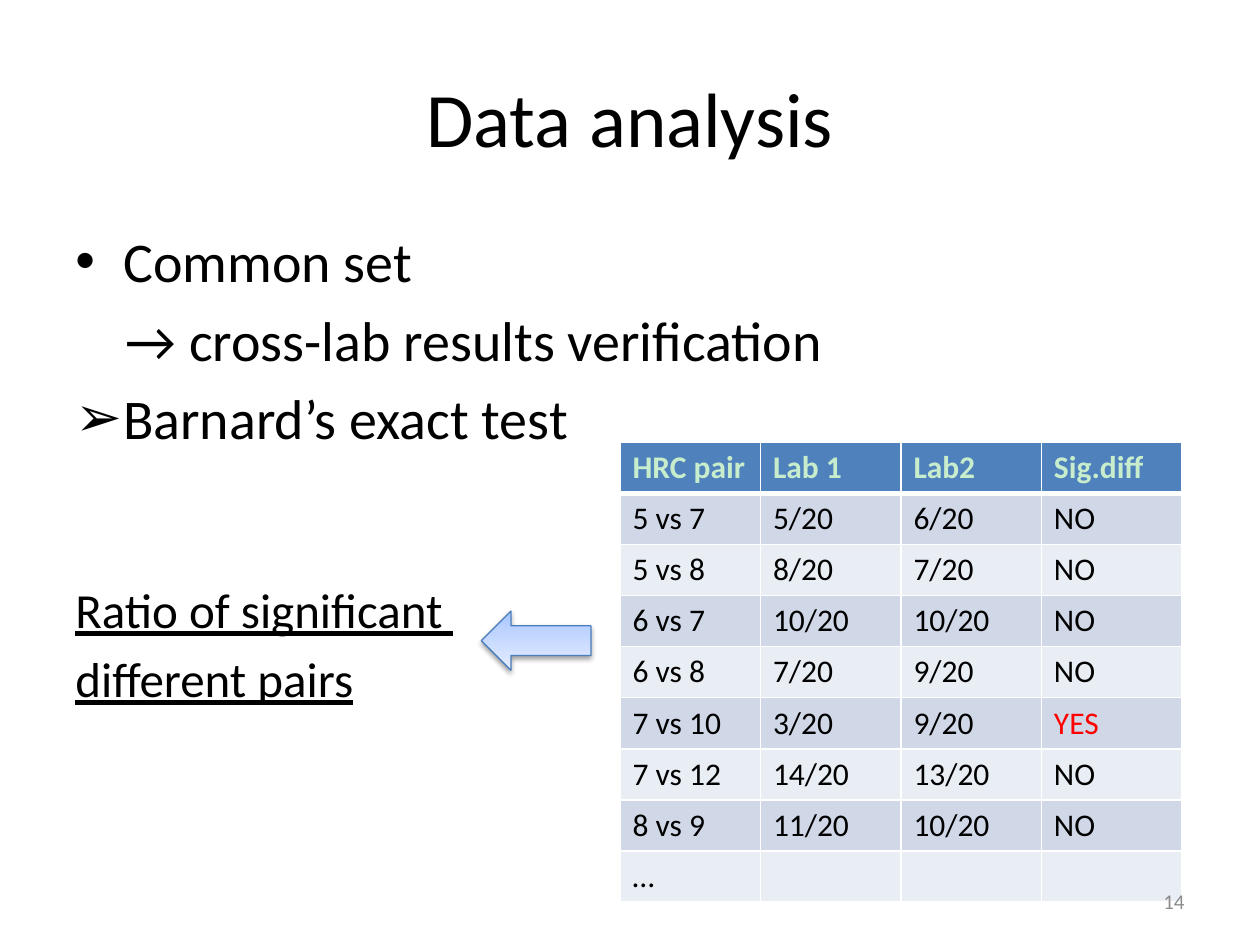
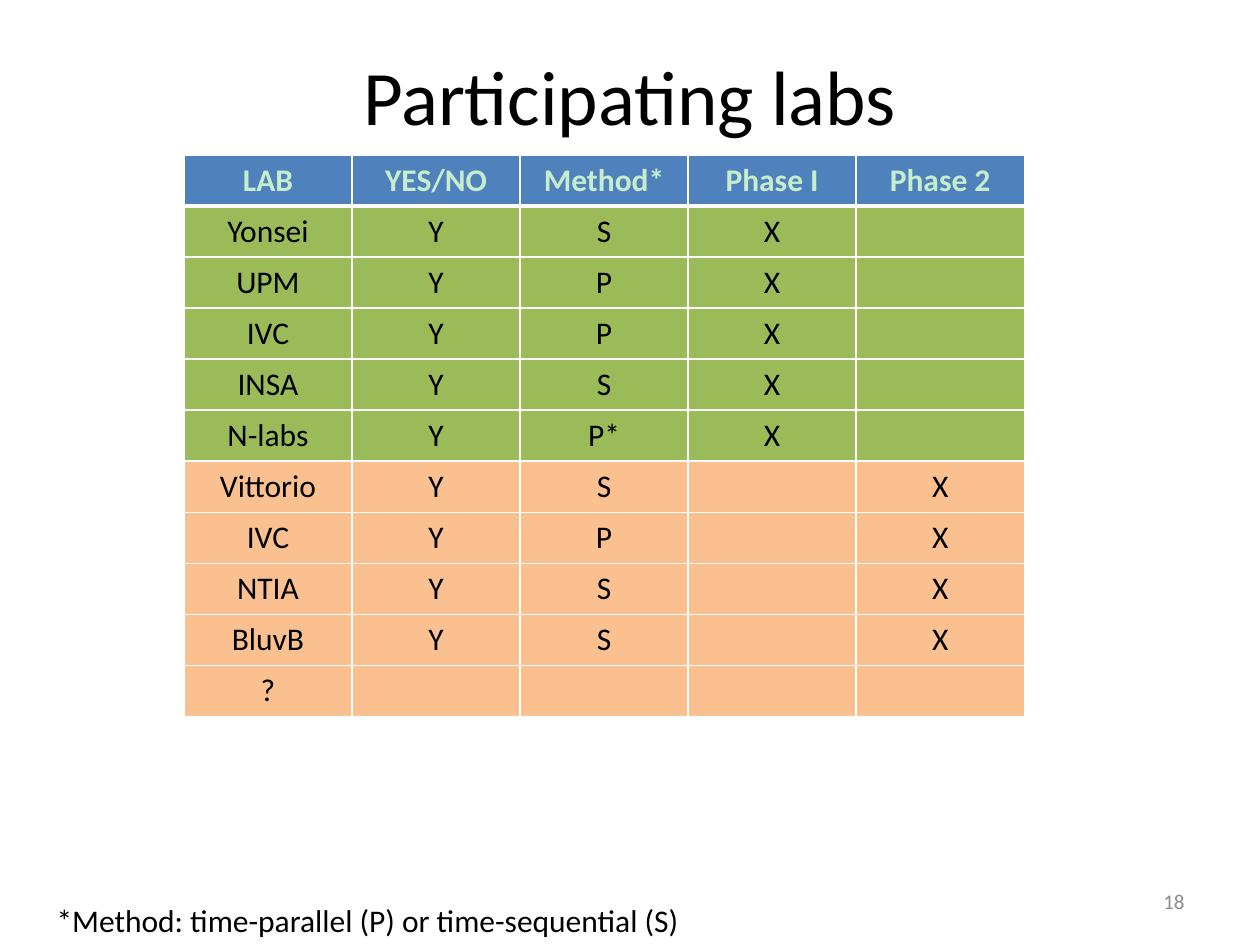
from lxml import etree
from pptx import Presentation
from pptx import util as u
from pptx.dml.color import RGBColor
from pptx.enum import shapes, text
from pptx.oxml import ns, parse_xml

FONT = "Calibri"
COLORS = {
    "paper": "FFFFFF", "ink": "000000", "header": "4F81BD", "header_ink": "C7EDCC",
    "band_dark": "D0D8E8", "band_light": "E9EDF4", "alert": "FF0000",
    "phase_1": "9BBB59", "phase_2": "FAC090", "number": "8C8C8C",
    "arrow_line": "4B7EBC",
}
ARROW_STOPS = [(0, "A4C4FF"), (35, "BFD4FF"), (100, "E6EEFF")]

ANALYSIS_POINTS = [
    {"words": "Common set", "size": 32, "before": 6.4, "left": 0.38, "bullet": "•"},
    {"words": "→ cross-lab results verification", "size": 32, "before": 6.4, "left": 0.4},
    {"words": "Barnard’s exact test", "size": 32, "before": 6.4, "left": 0.38, "bullet": "➢"},
    {"words": "Ratio of significant ", "size": 28, "before": 73.8, "underline": True},
    {"words": "different pairs", "size": 28, "before": 5.6, "underline": True},
]
PAIR_RESULTS = [
    ("HRC pair", "Lab 1", "Lab2", "Sig.diff"),
    ("5 vs 7", "5/20", "6/20", "NO"),
    ("5 vs 8", "8/20", "7/20", "NO"),
    ("6 vs 7", "10/20", "10/20", "NO"),
    ("6 vs 8", "7/20", "9/20", "NO"),
    ("7 vs 10", "3/20", "9/20", "YES"),
    ("7 vs 12", "14/20", "13/20", "NO"),
    ("8 vs 9", "11/20", "10/20", "NO"),
    ("…", "", "", ""),
]
LABS = [
    ("LAB", "YES/NO", "Method*", "Phase I", "Phase 2"),
    ("Yonsei", "Y", "S", "X", ""),
    ("UPM", "Y", "P", "X", ""),
    ("IVC", "Y", "P", "X", ""),
    ("INSA", "Y", "S", "X", ""),
    ("N-labs", "Y", "P*", "X", ""),
    ("Vittorio", "Y", "S", "", "X"),
    ("IVC", "Y", "P", "", "X"),
    ("NTIA", "Y", "S", "", "X"),
    ("BluvB", "Y", "S", "", "X"),
    ("?", "", "", "", ""),
]
METHOD_NOTE = "*Method: time-parallel (P) or time-sequential (S)"


def rgb(name):
    return RGBColor.from_string(COLORS[name])


def inches(*lengths):
    return [u.Inches(length) for length in lengths]


def write(paragraph, words, size, color="ink", align=text.PP_ALIGN.LEFT,
          bold=False, underline=False):
    paragraph.text = words
    paragraph.alignment = align
    for run in paragraph.runs:
        run.font.name = FONT
        run.font.size = u.Pt(size)
        run.font.bold = bold
        run.font.underline = underline
        run.font.color.rgb = rgb(color)


def add_frame(slide, box, anchor=text.MSO_ANCHOR.TOP, wrap=True):
    frame = slide.shapes.add_textbox(*inches(*box)).text_frame
    frame.word_wrap = wrap
    frame.vertical_anchor = anchor
    return frame


def add_page(deck, title, title_top, number):
    slide = deck.slides.add_slide(deck.slide_layouts[6])
    slide.background.fill.solid()
    slide.background.fill.fore_color.rgb = rgb("paper")
    middle = text.MSO_ANCHOR.MIDDLE
    heading = add_frame(slide, (0.5, title_top, 9, 1.25), middle)
    write(heading.paragraphs[0], title, 44, align=text.PP_ALIGN.CENTER)
    return slide


def add_number(slide, number):
    footer = add_frame(slide, (7.17, 6.95, 2.33, 0.4), text.MSO_ANCHOR.MIDDLE)
    write(footer.paragraphs[0], str(number), 12, "number", text.PP_ALIGN.RIGHT)


def add_borders(cell, bottom):
    properties = cell._tc.get_or_add_tcPr()
    widths = {"lnL": 1, "lnR": 1, "lnT": 1, "lnB": bottom}
    for place, (side, width) in enumerate(widths.items()):
        border = parse_xml(
            f'<a:{side} {ns.nsdecls("a")} w="{u.Pt(width)}"><a:solidFill>'
            f'<a:srgbClr val="{COLORS["paper"]}"/></a:solidFill></a:{side}>')
        properties.insert(place, border)


def add_grid(slide, rows, box, row_fill, align):
    grid = slide.shapes.add_table(len(rows), len(rows[0]), *inches(*box)).table
    for r, row in enumerate(rows):
        header = r == 0
        for c, words in enumerate(row):
            cell = grid.cell(r, c)
            cell.fill.solid()
            cell.fill.fore_color.rgb = rgb("header" if header else row_fill(r, row))
            add_borders(cell, 3 if header else 1)
            ink = "header_ink" if header else "alert" if words == "YES" else "ink"
            write(cell.text_frame.paragraphs[0], words, 18, ink, align, bold=header)


def add_points(slide):
    frame = add_frame(slide, (0.5, 1.75, 9, 5.46))
    for i, point in enumerate(ANALYSIS_POINTS):
        paragraph = frame.add_paragraph() if i else frame.paragraphs[0]
        write(paragraph, point["words"], point["size"],
              underline=point.get("underline", False))
        paragraph.space_before = u.Pt(point["before"])
        left = u.Inches(point.get("left", 0))
        properties = paragraph._p.get_or_add_pPr()
        properties.set("marL", str(left))
        if "bullet" in point:
            properties.set("indent", str(-left))
            etree.SubElement(properties, ns.qn("a:buFont"), typeface="Arial")
            etree.SubElement(properties, ns.qn("a:buChar"), char=point["bullet"])


def add_result_arrow(slide):
    arrow = slide.shapes.add_shape(shapes.MSO_SHAPE.LEFT_ARROW,
                                   *inches(3.82, 4.85, 0.87, 0.47))
    arrow.line.color.rgb = rgb("arrow_line")
    arrow.line.width = u.Pt(0.75)
    arrow.fill.gradient()
    arrow.fill.gradient_angle = 270
    stops = arrow._element.spPr.find(".//" + ns.qn("a:gsLst"))
    for stop in list(stops):
        stops.remove(stop)
    for position, color in ARROW_STOPS:
        stop = etree.SubElement(stops, ns.qn("a:gs"), pos=str(position * 1000))
        etree.SubElement(stop, ns.qn("a:srgbClr"), val=color)
    arrow.shadow.inherit = False
    effects = arrow._element.spPr.find(ns.qn("a:effectLst"))
    effects.append(parse_xml(
        f'<a:outerShdw {ns.nsdecls("a")} blurRad="{u.Pt(3.1)}" dist="{u.Pt(1.6)}" '
        f'dir="5400000" rotWithShape="0"><a:srgbClr val="{COLORS["ink"]}">'
        '<a:alpha val="38000"/></a:srgbClr></a:outerShdw>'))


def band_fill(r, row):
    return "band_dark" if r % 2 else "band_light"


def phase_fill(r, row):
    return "phase_1" if row[3] else "phase_2"


def main():
    deck = Presentation()
    deck.slide_width, deck.slide_height = inches(10, 7.5)

    analysis = add_page(deck, "Data analysis", 0.3, 14)
    add_points(analysis)
    add_grid(analysis, PAIR_RESULTS, (4.92, 3.51, 4.46, 3.65), band_fill,
             text.PP_ALIGN.LEFT)
    add_result_arrow(analysis)
    add_number(analysis, 14)

    labs = add_page(deck, "Participating labs", 0.13, 18)
    add_grid(labs, LABS, (1.46, 1.23, 6.67, 4.46), phase_fill, text.PP_ALIGN.CENTER)
    note = add_frame(labs, (0.35, 7.1, 5.21, 0.4), wrap=False)
    write(note.paragraphs[0], METHOD_NOTE, 18)
    add_number(labs, 18)

    deck.save("out.pptx")


if __name__ == "__main__":
    main()
